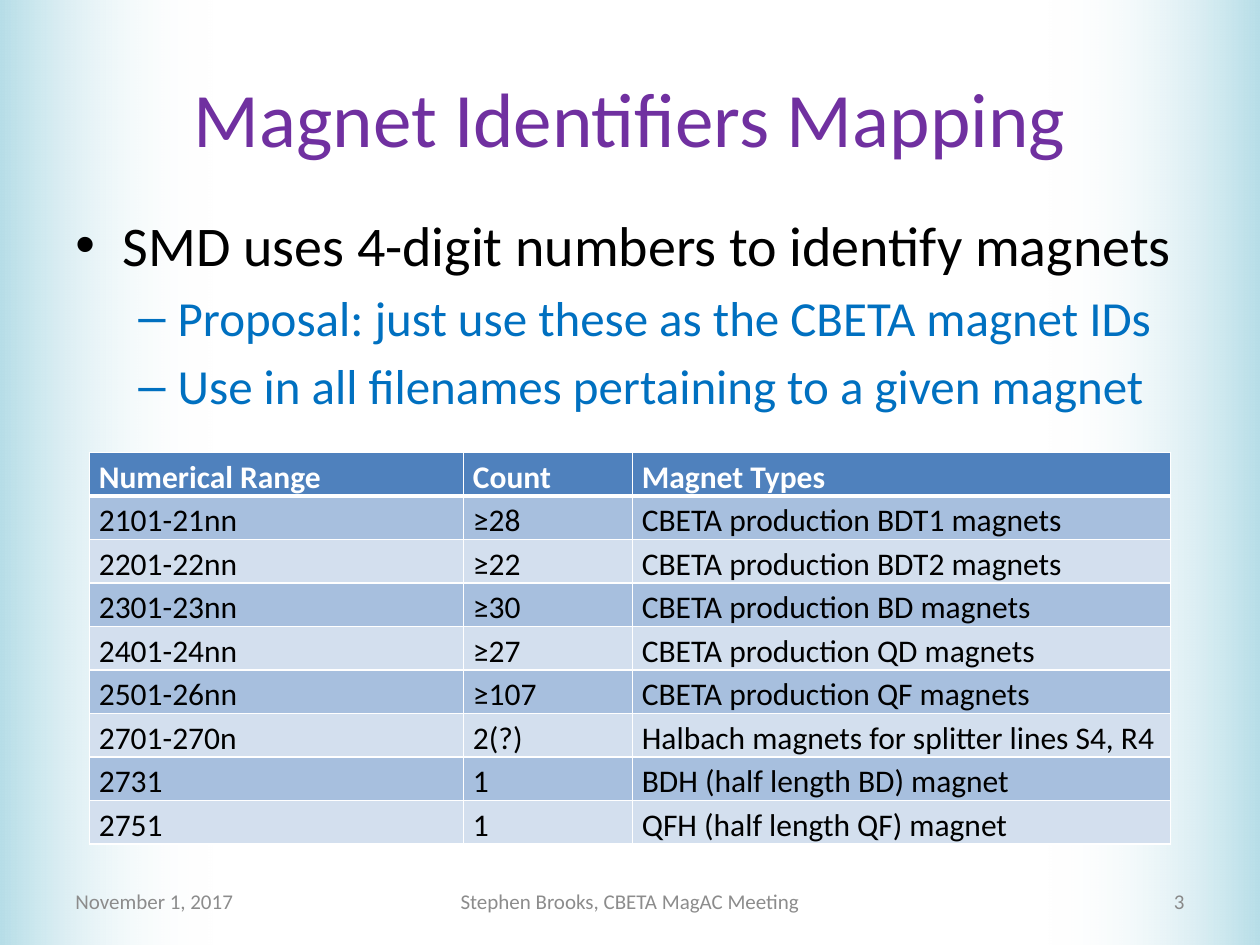
from dataclasses import dataclass

import lxml.etree
import pptx
import pptx.dml.color
import pptx.enum.shapes
import pptx.enum.text
import pptx.oxml.ns
import pptx.util

Pt = pptx.util.Pt
Align = pptx.enum.text.PP_ALIGN
Anchor = pptx.enum.text.MSO_ANCHOR


@dataclass(frozen=True)
class Theme:
    font: str = "Calibri"
    title_color: str = "7030A0"
    text_color: str = "000000"
    accent_color: str = "0070C0"
    footer_color: str = "8C8C8C"
    number_color: str = "898989"
    edge_color: str = "B7DEE8"
    white: str = "FFFFFF"
    header_fill: str = "4F81BD"
    row_fills: tuple[str, str] = ("A7BFDE", "D3DFEE")
    title_size: float = 44
    bullet_size: float = 32
    sub_bullet_size: float = 28
    table_size: float = 18
    footer_size: float = 12


@dataclass(frozen=True)
class Box:
    left: float
    top: float
    width: float
    height: float

    def lengths(self) -> tuple:
        return Pt(self.left), Pt(self.top), Pt(self.width), Pt(self.height)


@dataclass(frozen=True)
class Bullet:
    text: str
    level: int
    mark: str
    size: float
    color: str
    margin: float
    hanging: float


@dataclass(frozen=True)
class FooterItem:
    text: str
    box: Box
    color: str
    align: Align


THEME = Theme()
SLIDE_WIDTH, SLIDE_HEIGHT = 720, 540
BAND_WIDTH = 121.5
TITLE_BOX = Box(36, 21.6, 648, 90)
BODY_BOX = Box(36, 116.6, 648, 356.4)
TABLE_BOX = Box(51.1, 258.5, 617.8, 223.2)
COLUMN_WIDTHS = (213.8, 96.5, 307.5)
FOOTER_TOP, FOOTER_HEIGHT = 500.5, 28.75

BULLETS = (
    Bullet("SMD uses 4-digit numbers to identify magnets", 0, "•",
           THEME.bullet_size, THEME.text_color, 27, 27),
    *(Bullet(text, 1, "–", THEME.sub_bullet_size, THEME.accent_color, 58.5, 22.5)
      for text in ("Proposal: just use these as the CBETA magnet IDs",
                   "Use in all filenames pertaining to a given magnet")),
)
MAGNET_ROWS = (
    ("Numerical Range", "Count", "Magnet Types"),
    ("2101-21nn", "≥28", "CBETA production BDT1 magnets"),
    ("2201-22nn", "≥22", "CBETA production BDT2 magnets"),
    ("2301-23nn", "≥30", "CBETA production BD magnets"),
    ("2401-24nn", "≥27", "CBETA production QD magnets"),
    ("2501-26nn", "≥107", "CBETA production QF magnets"),
    ("2701-270n", "2(?)", "Halbach magnets for splitter lines S4, R4"),
    ("2731", "1", "BDH (half length BD) magnet"),
    ("2751", "1", "QFH (half length QF) magnet"),
)
FOOTER_ITEMS = (
    FooterItem("November 1, 2017", Box(36, FOOTER_TOP, 168, FOOTER_HEIGHT),
               THEME.footer_color, Align.LEFT),
    FooterItem("Stephen Brooks, CBETA MagAC Meeting", Box(246, FOOTER_TOP, 228, FOOTER_HEIGHT),
               THEME.footer_color, Align.CENTER),
    FooterItem("3", Box(516, FOOTER_TOP, 168, FOOTER_HEIGHT),
               THEME.number_color, Align.RIGHT),
)


def rgb(color: str) -> pptx.dml.color.RGBColor:
    return pptx.dml.color.RGBColor.from_string(color)


def add_element(parent, tag: str, **attributes: str):
    return lxml.etree.SubElement(parent, pptx.oxml.ns.qn(tag), **attributes)


def write_text(paragraph, text: str, *, size: float, color: str, bold: bool = False,
               align: Align = Align.LEFT, line_spacing: float = 1.0) -> None:
    paragraph.alignment = align
    paragraph.line_spacing = line_spacing
    run = paragraph.add_run()
    run.text = text
    run.font.name = THEME.font
    run.font.size = Pt(size)
    run.font.bold = bold
    run.font.color.rgb = rgb(color)


def add_text_box(slide, box: Box, anchor: Anchor):
    text_frame = slide.shapes.add_textbox(*box.lengths()).text_frame
    text_frame.word_wrap = True
    text_frame.vertical_anchor = anchor
    return text_frame


def add_edge_band(slide, left: float, rotation: float) -> None:
    """Add a band that fades to transparent, behind everything else."""
    band = slide.shapes.add_shape(pptx.enum.shapes.MSO_SHAPE.RECTANGLE,
                                  *Box(left, 0, BAND_WIDTH, SLIDE_HEIGHT).lengths())
    band.rotation = rotation
    band.shadow.inherit = False
    band.line.fill.background()
    band.fill.gradient()
    band.fill.gradient_angle = 0
    for stop, color, position in zip(band.fill.gradient_stops,
                                     (THEME.edge_color, THEME.white), (0, 1)):
        stop.color.rgb = rgb(color)
        stop.position = position
    last_color = band.element.findall(".//" + pptx.oxml.ns.qn("a:srgbClr"))[-1]
    add_element(last_color, "a:alpha", val="0")
    slide.shapes.element.insert(2, band.element)


def add_title(slide, text: str) -> None:
    title = slide.shapes.title
    title.left, title.top, title.width, title.height = TITLE_BOX.lengths()
    title.text_frame.vertical_anchor = Anchor.MIDDLE
    write_text(title.text_frame.paragraphs[0], text, size=THEME.title_size,
               color=THEME.title_color, align=Align.CENTER)


def add_bullets(slide) -> None:
    text_frame = add_text_box(slide, BODY_BOX, Anchor.TOP)
    for index, bullet in enumerate(BULLETS):
        paragraph = text_frame.add_paragraph() if index else text_frame.paragraphs[0]
        write_text(paragraph, bullet.text, size=bullet.size, color=bullet.color)
        paragraph.level = bullet.level
        paragraph.space_before = Pt(0.2 * bullet.size)
        properties = paragraph._p.get_or_add_pPr()
        properties.set("marL", str(Pt(bullet.margin)))
        properties.set("indent", str(-Pt(bullet.hanging)))
        add_element(properties, "a:buFont", typeface="Arial")
        add_element(properties, "a:buChar", char=bullet.mark)


def set_borders(cell, top: float, bottom: float) -> None:
    properties = cell._tc.get_or_add_tcPr()
    borders = (("a:lnL", 1), ("a:lnR", 1), ("a:lnT", top), ("a:lnB", bottom))
    for index, (tag, width) in enumerate(borders):
        line = add_element(properties, tag, w=str(Pt(width)))
        add_element(add_element(line, "a:solidFill"), "a:srgbClr", val=THEME.white)
        properties.insert(index, line)  # borders must come before the fill


def add_magnet_table(slide) -> None:
    table = slide.shapes.add_table(len(MAGNET_ROWS), len(COLUMN_WIDTHS),
                                   *TABLE_BOX.lengths()).table
    for column, width in zip(table.columns, COLUMN_WIDTHS):
        column.width = Pt(width)
    for row_index, texts in enumerate(MAGNET_ROWS):
        is_header = row_index == 0
        fill_color = THEME.header_fill if is_header else THEME.row_fills[(row_index - 1) % 2]
        for column_index, text in enumerate(texts):
            cell = table.cell(row_index, column_index)
            cell.margin_left = cell.margin_right = Pt(5.4)
            cell.margin_top = cell.margin_bottom = Pt(0)
            cell.fill.solid()
            cell.fill.fore_color.rgb = rgb(fill_color)
            set_borders(cell, top=3 if row_index == 1 else 1, bottom=3 if is_header else 1)
            write_text(cell.text_frame.paragraphs[0], text, size=THEME.table_size,
                       color=THEME.white if is_header else THEME.text_color,
                       bold=is_header, line_spacing=1.15)


def add_footer_item(slide, item: FooterItem) -> None:
    text_frame = add_text_box(slide, item.box, Anchor.MIDDLE)
    write_text(text_frame.paragraphs[0], item.text, size=THEME.footer_size,
               color=item.color, align=item.align)


def main() -> None:
    presentation = pptx.Presentation()
    presentation.slide_width, presentation.slide_height = Pt(SLIDE_WIDTH), Pt(SLIDE_HEIGHT)
    slide = presentation.slides.add_slide(presentation.slide_layouts.get_by_name("Title Only"))
    add_edge_band(slide, 0, rotation=0)
    add_edge_band(slide, SLIDE_WIDTH - BAND_WIDTH, rotation=180)
    add_title(slide, "Magnet Identifiers Mapping")
    add_bullets(slide)
    add_magnet_table(slide)
    for item in FOOTER_ITEMS:
        add_footer_item(slide, item)
    presentation.save("out.pptx")


if __name__ == "__main__":
    main()
